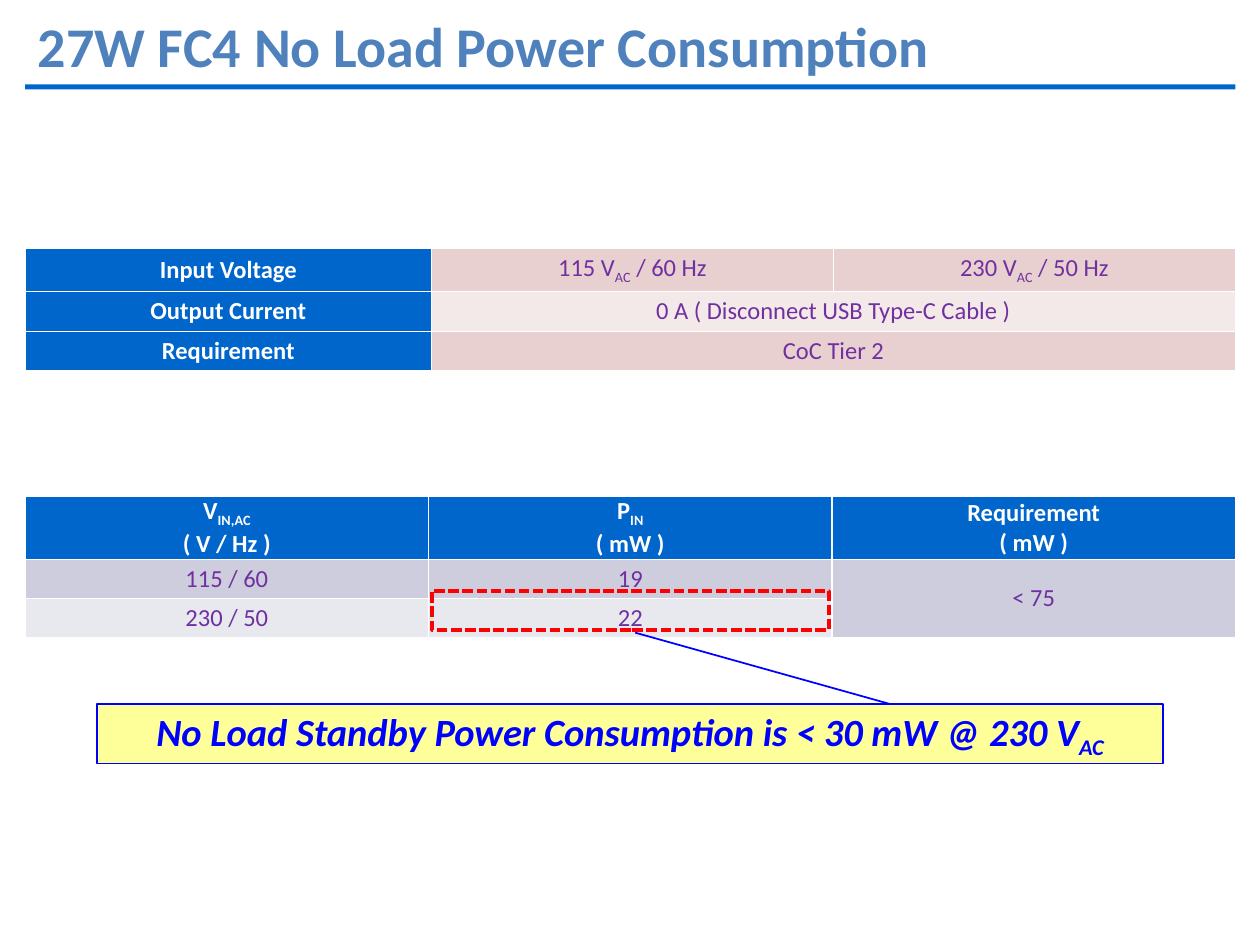
from dataclasses import dataclass
from typing import NamedTuple

from lxml import etree
from pptx import Presentation
from pptx import util as u
from pptx.dml.color import RGBColor
from pptx.enum import dml, shapes, text
from pptx.oxml import ns

SLIDE_WIDTH, SLIDE_HEIGHT = u.Inches(10), u.Inches(7.5)
GRID_COLUMNS, GRID_ROWS = 100, 75
LEFT, FULL_WIDTH = 2, 96.05


@dataclass(frozen=True)
class Theme:
    font: str = "Calibri"
    title_size: float = 32
    table_size: float = 14
    callout_size: float = 22
    title: str = "4F81BD"
    header: str = "0066CC"
    white: str = "FFFFFF"
    value: str = "7030A0"
    rose: str = "E8D0D0"
    pale_rose: str = "F4E9E9"
    lilac: str = "CDCDDE"
    pale_lilac: str = "E8E8EF"
    callout_fill: str = "FFFF99"
    callout_ink: str = "0000FF"
    highlight: str = "FF0000"


THEME = Theme()


class Area(NamedTuple):
    """A place on the slide, in grid columns and rows."""
    left: float
    top: float
    width: float
    height: float

    def lengths(self) -> tuple[int, int, int, int]:
        return (across(self.left), down(self.top),
                across(self.width), down(self.height))


class Entry(NamedTuple):
    row: int
    column: int
    words: str
    fill: str
    rows: int = 1
    columns: int = 1


@dataclass(frozen=True)
class TableSpec:
    area: Area
    column_widths: tuple[float, ...]
    row_heights: tuple[float, ...]
    margin: float
    entries: tuple[Entry, ...]


def across(columns: float) -> int:
    return round(SLIDE_WIDTH * columns / GRID_COLUMNS)


def down(rows: float) -> int:
    return round(SLIDE_HEIGHT * rows / GRID_ROWS)


def color(code: str) -> RGBColor:
    return RGBColor.from_string(code)


def write(frame, words: str, *, size: float, ink: str, bold: bool = False,
          italic: bool = False, align=text.PP_ALIGN.CENTER) -> None:
    """Write one paragraph a line; words between bars are subscript."""
    for number, line in enumerate(words.split("\n")):
        para = frame.add_paragraph() if number else frame.paragraphs[0]
        para.alignment = align
        for part, piece in enumerate(line.split("|")):
            if not piece:
                continue
            span = para.add_run()
            span.text = piece
            font = span.font
            font.name, font.size = THEME.font, u.Pt(size)
            font.bold, font.italic = bold, italic
            font.color.rgb = color(ink)
            if part % 2:
                span._r.get_or_add_rPr().set("baseline", "-25000")


def set_borders(cell, ink: str, width: float) -> None:
    properties = cell._tc.get_or_add_tcPr()
    for position, side in enumerate(("lnL", "lnR", "lnT", "lnB")):
        line = etree.Element(ns.qn(f"a:{side}"), w=str(u.Pt(width)))
        fill = etree.SubElement(line, ns.qn("a:solidFill"))
        etree.SubElement(fill, ns.qn("a:srgbClr"), val=ink)
        properties.insert(position, line)


def add_title(slide, area: Area, words: str) -> None:
    title = slide.shapes.title
    title.left, title.top, title.width, title.height = area.lengths()
    frame = title.text_frame
    frame.auto_size = text.MSO_AUTO_SIZE.NONE
    frame.vertical_anchor = text.MSO_ANCHOR.MIDDLE
    write(frame, words, size=THEME.title_size, ink=THEME.title, bold=True,
          align=text.PP_ALIGN.LEFT)


def add_box(slide, area: Area, *, kind=shapes.MSO_SHAPE.RECTANGLE,
            fill: str | None = None, line: str | None = None,
            line_width: float = 1):
    box = slide.shapes.add_shape(kind, *area.lengths())
    box.shadow.inherit = False
    if fill:
        box.fill.solid()
        box.fill.fore_color.rgb = color(fill)
    else:
        box.fill.background()
    if line:
        box.line.color.rgb = color(line)
        box.line.width = u.Pt(line_width)
    else:
        box.line.fill.background()
    return box


def add_table(slide, spec: TableSpec) -> None:
    table = slide.shapes.add_table(
        len(spec.row_heights), len(spec.column_widths), *spec.area.lengths()).table
    for column, width in zip(table.columns, spec.column_widths):
        column.width = across(width)
    for row, height in zip(table.rows, spec.row_heights):
        row.height = down(height)
    for cell in table.iter_cells():
        set_borders(cell, THEME.white, 1)
    for entry in spec.entries:
        cell = table.cell(entry.row, entry.column)
        if entry.rows * entry.columns > 1:
            cell.merge(table.cell(entry.row + entry.rows - 1,
                                  entry.column + entry.columns - 1))
        cell.fill.solid()
        cell.fill.fore_color.rgb = color(entry.fill)
        cell.vertical_anchor = text.MSO_ANCHOR.MIDDLE
        cell.margin_left = cell.margin_right = 0
        cell.margin_top = cell.margin_bottom = down(spec.margin)
        is_header = entry.fill == THEME.header
        write(cell.text_frame, entry.words, size=THEME.table_size, bold=is_header,
              ink=THEME.white if is_header else THEME.value)


def add_callout(slide, area: Area, words: str, pointer: tuple[float, ...]) -> None:
    """Pointer gives start y, start x, end y, end x as shares of the box."""
    box = add_box(slide, area, kind=shapes.MSO_SHAPE.LINE_CALLOUT_1,
                  fill=THEME.callout_fill, line=THEME.callout_ink)
    for number, share in enumerate(pointer):
        box.adjustments[number] = share
    frame = box.text_frame
    frame.word_wrap = True
    frame.vertical_anchor = text.MSO_ANCHOR.MIDDLE
    frame.margin_left = frame.margin_right = 0
    frame.margin_top = frame.margin_bottom = 0
    write(frame, words, size=THEME.callout_size, ink=THEME.callout_ink,
          bold=True, italic=True)


CONDITIONS = TableSpec(
    Area(LEFT, 19.7, FULL_WIDTH, 9.4), (32.25, 31.9, 31.9), (3.1,) * 3, 0.4, (
        Entry(0, 0, "Input Voltage", THEME.header),
        Entry(0, 1, "115 V|AC| / 60 Hz", THEME.rose),
        Entry(0, 2, "230 V|AC| / 50 Hz", THEME.rose),
        Entry(1, 0, "Output Current", THEME.header),
        Entry(1, 1, "0 A ( Disconnect USB Type-C Cable )", THEME.pale_rose, columns=2),
        Entry(2, 0, "Requirement", THEME.header),
        Entry(2, 1, "CoC Tier 2", THEME.rose, columns=2)))

RESULTS = TableSpec(
    Area(LEFT, 39.4, FULL_WIDTH, 11), (FULL_WIDTH / 3,) * 3, (4.7, 3.1, 3.1), 0, (
        Entry(0, 0, "V|IN,AC|\n( V / Hz )", THEME.header),
        Entry(0, 1, "P|IN|\n( mW )", THEME.header),
        Entry(0, 2, "Requirement\n( mW )", THEME.header),
        Entry(1, 0, "115 / 60", THEME.lilac),
        Entry(1, 1, "19", THEME.lilac),
        Entry(1, 2, "< 75", THEME.lilac, rows=2),
        Entry(2, 0, "230 / 50", THEME.pale_lilac),
        Entry(2, 1, "22", THEME.pale_lilac)))


def main() -> None:
    deck = Presentation()
    deck.slide_width, deck.slide_height = SLIDE_WIDTH, SLIDE_HEIGHT
    page = deck.slides.add_slide(deck.slide_layouts.get_by_name("Title Only"))
    add_title(page, Area(LEFT, 0.4, FULL_WIDTH, 6.3), "27W FC4 No Load Power Consumption")
    add_box(page, Area(LEFT, 6.7, FULL_WIDTH, 0.4), fill=THEME.header)
    add_table(page, CONDITIONS)
    add_table(page, RESULTS)
    add_callout(page, Area(7.7, 55.9, 84.6, 4.7),
                "No Load Standby Power Consumption is < 30 mW @ 230 V|AC|",
                pointer=(0, 0.745, -1.21, 0.505))
    highlight = add_box(page, Area(34.3, 46.9, 31.5, 3.1),
                        line=THEME.highlight, line_width=2)
    highlight.line.dash_style = dml.MSO_LINE.SQUARE_DOT
    deck.save("out.pptx")


if __name__ == "__main__":
    main()
